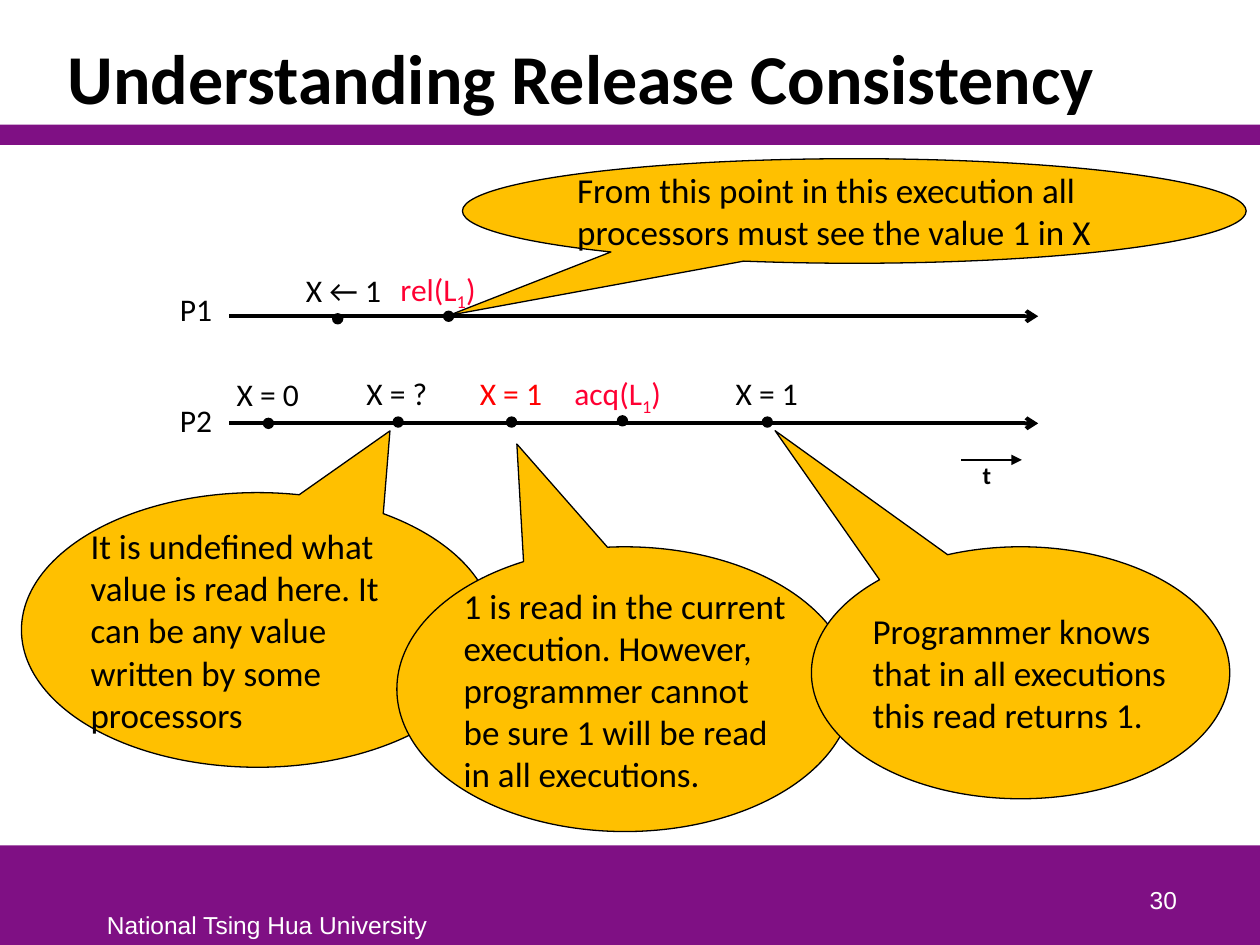
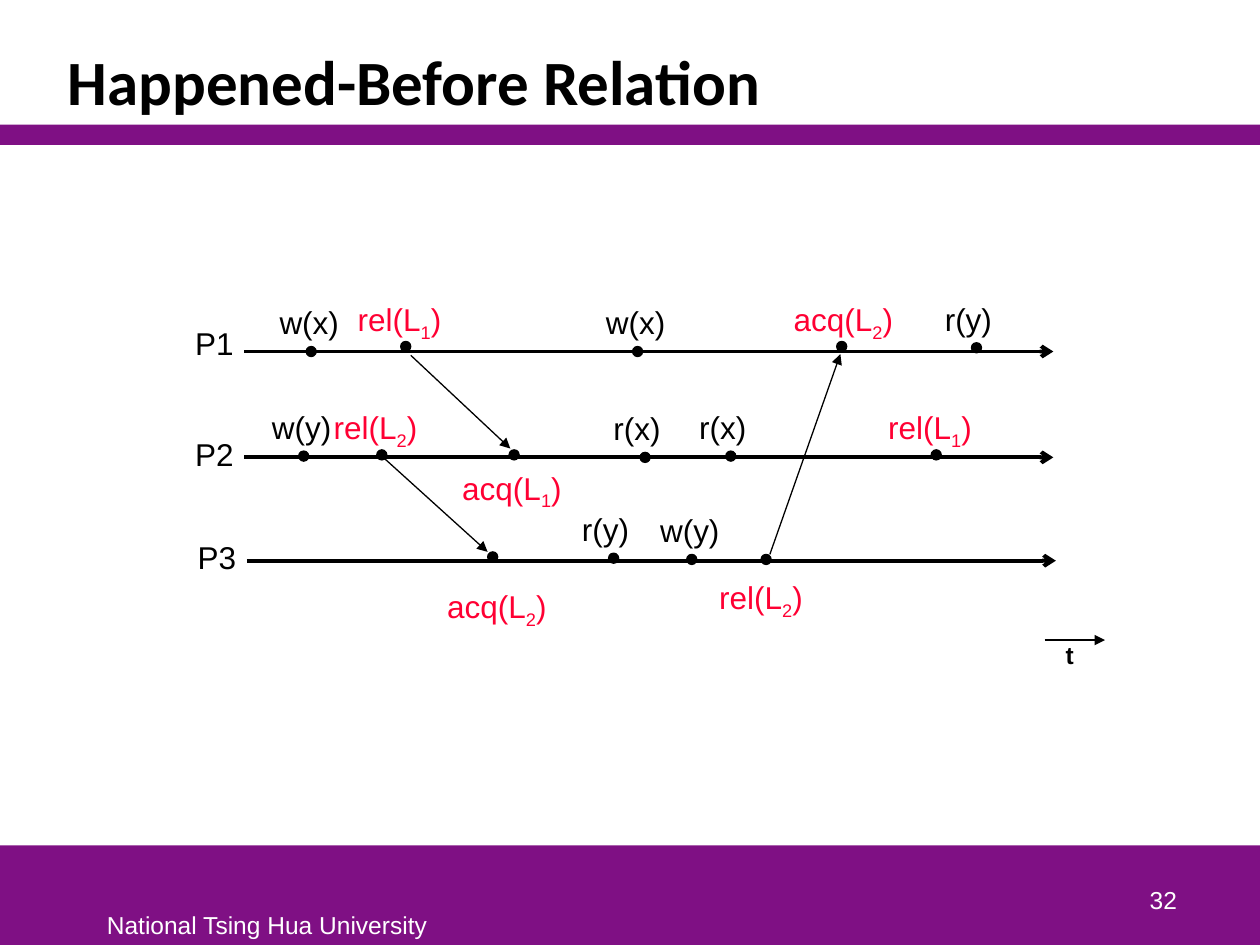
from lxml.etree import SubElement
from pptx import Presentation
from pptx.dml.color import RGBColor
from pptx.enum.shapes import MSO_CONNECTOR, MSO_SHAPE
from pptx.enum.text import MSO_ANCHOR, PP_ALIGN
from pptx.oxml.ns import qn
from pptx.util import Inches, Pt

BLACK, WHITE, PURPLE = "000000", "FFFFFF", "7F1084"
PINK, RED, GOLD = "FF0033", "FF0000", "FFC000"
WIDE, HIGH = 10, 7.5
DOT, LANE = 0.08, 6.42
WIDTHS = {"X ← 1": 0.82, "X": 0.7, "w": 0.68, "r": 0.58}

# lanes: name, left, line y, label top
# events: label, dot left, dot top, then any change: colour, or label offset
# calls: text, box, pointer as shares of the box
SLIDES = [
    {
        "title": "Understanding Release Consistency", "size": 40, "page": "30",
        "font": "Calibri", "row": 0.4, "time": (7.63, 3.65),
        "lanes": [("P1", 1.82, 2.51, 2.25), ("P2", 1.82, 3.36, 3.13)],
        "events": [
            ("rel(L_1)", 3.52, 2.47, {}),
            ("X ← 1", 2.64, 2.49, {}),
            ("X = 0", 2.09, 3.32, {}),
            ("X = ?", 3.12, 3.31, {}),
            ("acq(L_1)", 4.9, 3.3, {}),
            ("X = 1", 4.02, 3.31, {"color": RED}),
            ("X = 1", 6.05, 3.31, {}),
        ],
        "links": [],
        "calls": [
            ("From this point in this execution all processors must see "
             "the value 1 in X", (3.67, 1.26, 6.22, 0.83), (-0.517, 0.998)),
            ("It is undefined what value is read here. It can be any value "
             "written by some processors",
             (0.17, 3.91, 3.75, 2.18), (0.28, -0.725)),
            ("1 is read in the current execution. However, programmer cannot "
             "be sure 1 will be read in all executions.",
             (3.15, 4.34, 3.62, 2.26), (-0.237, -0.861)),
            ("Programmer knows that in all executions this read returns 1.",
             (6.44, 4.34, 3.32, 2), (-0.587, -0.961)),
        ],
    },
    {
        "title": "Happened-Before Relation", "size": 36, "page": "32",
        "font": "Arial", "row": 0.37, "time": (8.29, 5.08),
        "lanes": [("P1", 1.94, 2.79, 2.52), ("P2", 1.94, 3.63, 3.4),
                  ("P3", 1.96, 4.45, 4.22)],
        "events": [
            ("w(x)", 2.43, 2.75, {}),
            ("rel(L_1)", 3.18, 2.71, {}),
            ("w(x)", 5.02, 2.75, {}),
            ("acq(L_2)", 6.64, 2.71, {}),
            ("r(y)", 7.71, 2.72, {}),
            ("w(y)", 2.37, 3.58, {}),
            ("rel(L_2)", 2.99, 3.57, {}),
            ("acq(L_1)", 4.04, 3.57, {"shift": (-0.47, 0.1)}),
            ("r(x)", 5.08, 3.59, {}),
            ("r(x)", 5.76, 3.58, {}),
            ("rel(L_1)", 7.39, 3.57, {}),
            ("acq(L_2)", 3.87, 4.38, {"shift": (-0.42, 0.23)}),
            ("r(y)", 4.83, 4.39, {}),
            ("w(y)", 5.45, 4.4, {}),
            ("rel(L_2)", 6.04, 4.4, {"shift": (-0.43, 0.14)}),
        ],
        "links": [((3.26, 2.82), (4.05, 3.56)), ((3.03, 3.62), (3.87, 4.38)),
                  ((6.11, 4.4), (6.67, 2.81))],
        "calls": [],
    },
]


def rgb(code):
    return RGBColor.from_string(code)


def write(frame, text, font, size, color=BLACK, bold=False):
    """Fill a frame; the character after "_" becomes a subscript."""
    para = frame.paragraphs[0]
    head, _, rest = text.partition("_")
    for part, low in ((head, False), (rest[:1], True), (rest[1:], False)):
        if not part:
            continue
        run = para.add_run()
        run.text = part
        run.font.name, run.font.size = font, Pt(size)
        run.font.bold = bold
        run.font.color.rgb = rgb(color)
        if low:
            run._r.get_or_add_rPr().set("baseline", "-25000")
    return para


def label(slide, box, text, font, size=18, wrap=False, low=False, **look):
    frame = slide.shapes.add_textbox(*map(Inches, box)).text_frame
    frame.word_wrap = wrap
    if low:
        frame.vertical_anchor = MSO_ANCHOR.BOTTOM
    return write(frame, text, font, size, **look)


def shape(slide, kind, box, fill, edge=None):
    item = slide.shapes.add_shape(kind, *map(Inches, box))
    item.shadow.inherit = False
    item.fill.solid()
    item.fill.fore_color.rgb = rgb(fill)
    if edge:
        item.line.color.rgb = rgb(edge)
        item.line.width = Pt(0.75)
    else:
        item.line.fill.background()
    return item


def arrow(slide, start, end, width, tip="triangle"):
    item = slide.shapes.add_connector(
        MSO_CONNECTOR.STRAIGHT, *map(Inches, start + end))
    item.line.color.rgb = rgb(BLACK)
    item.line.width = Pt(width)
    SubElement(item.line._get_or_add_ln(), qn("a:tailEnd"), type=tip)
    SubElement(item._element.spPr, qn("a:effectLst"))


def base(slide, data):
    """Draw the bands, title, footer and page number."""
    for top, high in ((6.71, HIGH - 6.71), (0.99, 0.16)):
        shape(slide, MSO_SHAPE.RECTANGLE, (0, top, WIDE, high), PURPLE)
    label(slide, (0.75, 7.17, 2.76, 0.33), "National Tsing Hua University",
          "Arial", 14, color=WHITE)
    title = label(slide, (0.44, 0.25, 8.97, 0.74), data["title"], "Calibri",
                  data["size"], wrap=True, low=True, bold=True)
    title.line_spacing = 0.85
    page = label(slide, (7.36, 6.81, 2.08, 0.5), data["page"], "Arial", 14,
                 wrap=True, low=True, color=WHITE)
    page.alignment = PP_ALIGN.RIGHT


def event(slide, data, text, left, top, color=None, shift=None):
    """Place a dot and its label; lock events are pink."""
    lock = "_" in text
    dx, dy = shift or ((-0.44, -0.38) if lock else (-0.31, -0.39))
    wide = 1.25 if lock else WIDTHS.get(text, WIDTHS.get(text[0]))
    label(slide, (left + dx, top + dy, wide, data["row"]), text, data["font"],
          wrap=lock, color=color or (PINK if lock else BLACK))
    shape(slide, MSO_SHAPE.OVAL, (left, top, DOT, DOT), BLACK, BLACK)


def call(slide, text, box, point):
    item = shape(slide, MSO_SHAPE.OVAL_CALLOUT, box, GOLD, BLACK)
    item.adjustments[0], item.adjustments[1] = point
    frame = item.text_frame
    frame.word_wrap = True
    frame.vertical_anchor = MSO_ANCHOR.MIDDLE
    frame.margin_left = frame.margin_right = 0
    frame.margin_top = frame.margin_bottom = 0
    write(frame, text, "Calibri", 20).alignment = PP_ALIGN.LEFT


def draw(slide, data):
    base(slide, data)
    font = data["font"]
    name_w = 0.46 if font == "Calibri" else 0.51
    for name, left, y, top in data["lanes"]:
        arrow(slide, (left, y), (left + LANE, y), 2.25, "arrow")
        label(slide, (left - 0.49, top, name_w, 0.4), name, font)
    for text, left, top, change in data["events"]:
        event(slide, data, text, left, top, **change)
    for start, end in data["links"]:
        arrow(slide, start, end, 0.75)
    x, y = data["time"]
    arrow(slide, (x, y), (x + 0.48, y), 1)
    label(slide, (x + 0.07, y - 0.05, 0.27, data["row"] - 0.06), "t", font, 14,
          bold=True)
    for text, box, point in data["calls"]:
        call(slide, text, box, point)


def main():
    deck = Presentation()
    deck.slide_width, deck.slide_height = Inches(WIDE), Inches(HIGH)
    for data in SLIDES:
        draw(deck.slides.add_slide(deck.slide_layouts[6]), data)
    deck.save("out.pptx")


if __name__ == "__main__":
    main()
